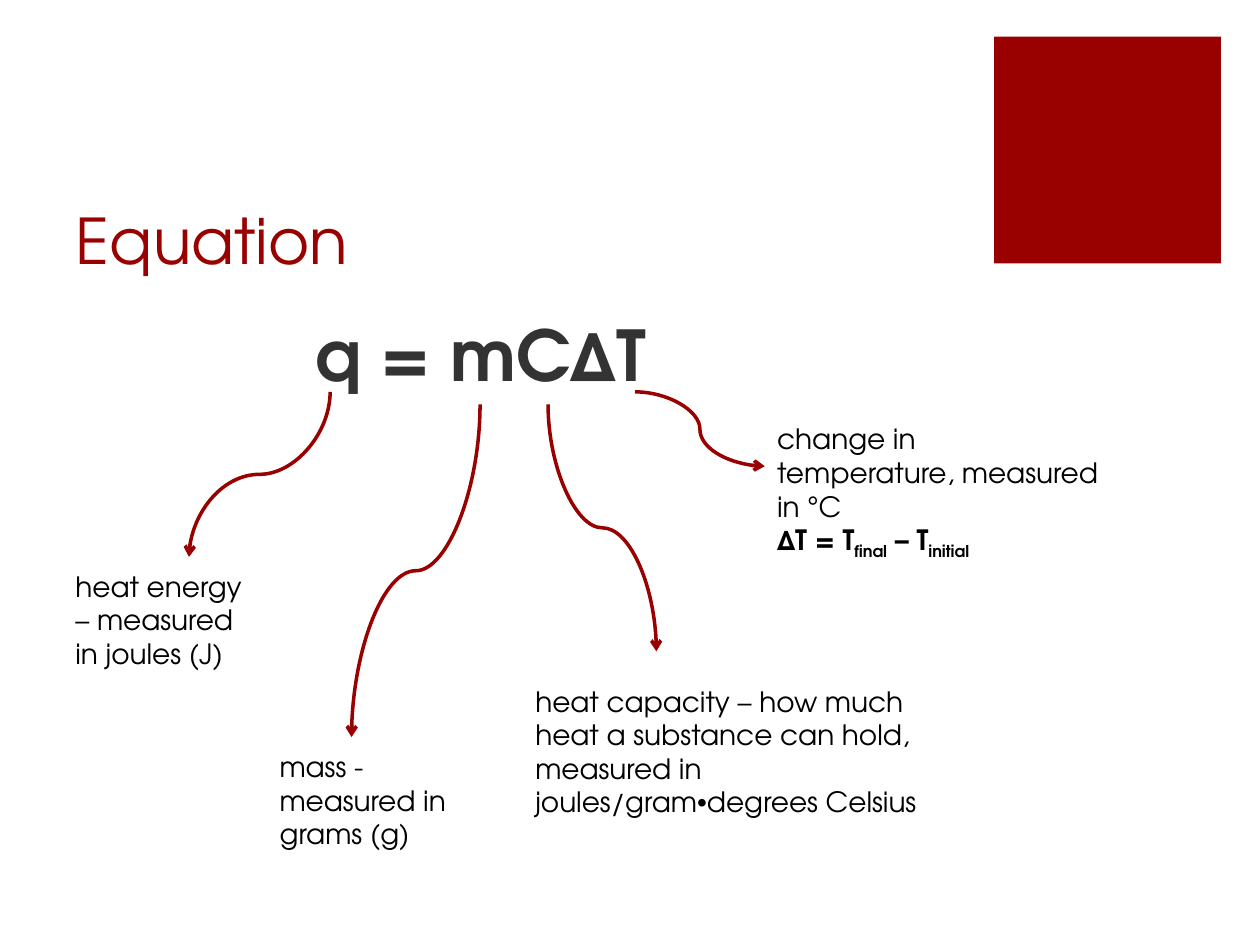
"""Build the slide that explains each symbol of the heat equation."""
from dataclasses import dataclass

import lxml.etree
import pptx
import pptx.dml.color
import pptx.enum.shapes
import pptx.enum.text
import pptx.oxml
import pptx.oxml.ns
import pptx.presentation
import pptx.shapes.base
import pptx.slide
import pptx.text.text
import pptx.util
from pptx.util import Inches


@dataclass(frozen=True)
class Theme:
    """Colours, fonts and point sizes of the slide."""

    accent: str = "990000"
    equation: str = "333333"
    caption: str = "000000"
    font: str = "TeX Gyre Adventor"
    symbol_font: str = "Arial"
    title_size: int = 36
    equation_size: int = 40
    caption_size: int = 16
    line_width: int = 2


THEME = Theme()


@dataclass(frozen=True)
class Box:
    """A rectangle in inches."""

    left: float
    top: float
    width: float
    height: float


@dataclass(frozen=True)
class Piece:
    """A stretch of caption text with one format."""

    text: str
    bold: bool = False
    subscript: bool = False
    font: str = THEME.font


@dataclass(frozen=True)
class Caption:
    """An explanation made of paragraphs of pieces."""

    box: Box
    paragraphs: tuple[tuple[Piece, ...], ...]


@dataclass(frozen=True)
class Arrow:
    """A curved arrow between two points in inches."""

    start: tuple[float, float]
    end: tuple[float, float]
    leaves_down: bool = True


SQUARE = Box(7.89, 0.29, 1.8, 1.8)
TITLE = Box(0.5, 1, 7.12, 1.25)
BODY = Box(0.5, 2.42, 8.81, 4.28)
EQUATION_INDENT = 1.9

ARROWS = (
    Arrow((2.62, 3.11), (1.5, 4.42)),
    Arrow((3.81, 3.21), (2.79, 5.85)),
    Arrow((4.35, 3.21), (5.21, 5.17)),
    Arrow((5.04, 3.11), (6.07, 3.7), leaves_down=False),
)

CAPTIONS = (
    Caption(Box(0.5, 4.47, 1.62, 0.91), ((Piece("heat energy – measured in joules (J)"),),)),
    Caption(Box(2.12, 5.9, 1.59, 0.91), ((Piece("mass - measured in grams (g)"),),)),
    Caption(
        Box(4.15, 5.38, 3.25, 1.18),
        ((
            Piece("heat capacity – how much heat a substance can hold, measured in joules/gram"),
            Piece("•", font=THEME.symbol_font),
            Piece("degrees Celsius"),
        ),),
    ),
    Caption(
        Box(6.07, 3.3, 2.76, 1.18),
        (
            (Piece("change in temperature, measured in °C"),),
            (
                Piece("ΔT = T", bold=True),
                Piece("final", bold=True, subscript=True),
                Piece(" – T", bold=True),
                Piece("initial", bold=True, subscript=True),
            ),
        ),
    ),
)


def rgb(color: str) -> pptx.dml.color.RGBColor:
    """Turn a hex string into a colour."""
    return pptx.dml.color.RGBColor.from_string(color)


def lengths(box: Box) -> tuple[pptx.util.Length, ...]:
    """Give the box as left, top, width and height lengths."""
    return Inches(box.left), Inches(box.top), Inches(box.width), Inches(box.height)


def format_run(run: pptx.text.text._Run, size: int, color: str, bold: bool = False,
               font: str = THEME.font) -> None:
    """Set the font of a run."""
    run.font.name = font
    run.font.size = pptx.util.Pt(size)
    run.font.bold = bold
    run.font.color.rgb = rgb(color)


def fill_placeholder(shape: pptx.shapes.base.BaseShape, box: Box, text: str, size: int,
                     color: str, bold: bool = False) -> pptx.text.text._Paragraph:
    """Move a placeholder, write one line in it and return its paragraph."""
    shape.left, shape.top, shape.width, shape.height = lengths(box)
    shape.text_frame.text = text
    shape.text_frame.auto_size = pptx.enum.text.MSO_AUTO_SIZE.NONE
    paragraph = shape.text_frame.paragraphs[0]
    paragraph.alignment = pptx.enum.text.PP_ALIGN.LEFT
    format_run(paragraph.runs[0], size, color, bold)
    return paragraph


def add_square(slide: pptx.slide.Slide) -> None:
    """Draw the accent square in the corner."""
    square = slide.shapes.add_shape(pptx.enum.shapes.MSO_SHAPE.RECTANGLE, *lengths(SQUARE))
    square.shadow.inherit = False
    square.fill.solid()
    square.fill.fore_color.rgb = rgb(THEME.accent)
    square.line.fill.background()


def add_arrow(slide: pptx.slide.Slide, arrow: Arrow) -> None:
    """Draw a curved arrow, turning its frame when it leaves downwards."""
    (start_x, start_y), (end_x, end_y) = arrow.start, arrow.end
    rotation = 0
    if arrow.leaves_down:
        center_x, center_y = (start_x + end_x) / 2, (start_y + end_y) / 2
        side = 1 if end_x > start_x else -1
        half_length, half_width = (end_y - start_y) / 2, abs(end_x - start_x) / 2
        start_x, end_x = center_x + side * half_length, center_x - side * half_length
        start_y, end_y = center_y - half_width, center_y + half_width
        rotation = 180 + 90 * side
    connector = slide.shapes.add_connector(
        pptx.enum.shapes.MSO_CONNECTOR.CURVE,
        Inches(start_x), Inches(start_y), Inches(end_x), Inches(end_y),
    )
    connector.rotation = rotation
    connector.line.color.rgb = rgb(THEME.accent)
    connector.line.width = pptx.util.Pt(THEME.line_width)
    properties = connector._element.spPr
    line = properties.find(pptx.oxml.ns.qn("a:ln"))
    lxml.etree.SubElement(line, pptx.oxml.ns.qn("a:tailEnd"), type="arrow")
    lxml.etree.SubElement(properties, pptx.oxml.ns.qn("a:effectLst"))


def add_caption(slide: pptx.slide.Slide, caption: Caption) -> None:
    """Write one explanation in a wrapping text box."""
    text_frame = slide.shapes.add_textbox(*lengths(caption.box)).text_frame
    text_frame.word_wrap = True
    text_frame.auto_size = pptx.enum.text.MSO_AUTO_SIZE.SHAPE_TO_FIT_TEXT
    for index, pieces in enumerate(caption.paragraphs):
        paragraph = text_frame.add_paragraph() if index else text_frame.paragraphs[0]
        for piece in pieces:
            run = paragraph.add_run()
            run.text = piece.text
            format_run(run, THEME.caption_size, THEME.caption, piece.bold, piece.font)
            if piece.subscript:
                run._r.get_or_add_rPr().set("baseline", "-25000")


def main() -> None:
    """Build and save the presentation."""
    presentation = pptx.Presentation()
    presentation.slide_width, presentation.slide_height = Inches(10), Inches(7.5)
    slide = presentation.slides.add_slide(presentation.slide_layouts[1])
    add_square(slide)
    title, body = slide.shapes.title, slide.placeholders[1]
    fill_placeholder(title, TITLE, "Equation", THEME.title_size, THEME.accent)
    title.text_frame.vertical_anchor = pptx.enum.text.MSO_ANCHOR.BOTTOM
    equation = fill_placeholder(body, BODY, "q = mCΔT", THEME.equation_size, THEME.equation, bold=True)
    equation.space_before = pptx.util.Pt(18)
    properties = equation._p.get_or_add_pPr()
    properties.set("marL", str(Inches(EQUATION_INDENT)))
    properties.set("indent", "0")
    lxml.etree.SubElement(properties, pptx.oxml.ns.qn("a:buNone"))
    for arrow in ARROWS:
        add_arrow(slide, arrow)
    for caption in CAPTIONS:
        add_caption(slide, caption)
    presentation.save("out.pptx")


if __name__ == "__main__":
    main()
